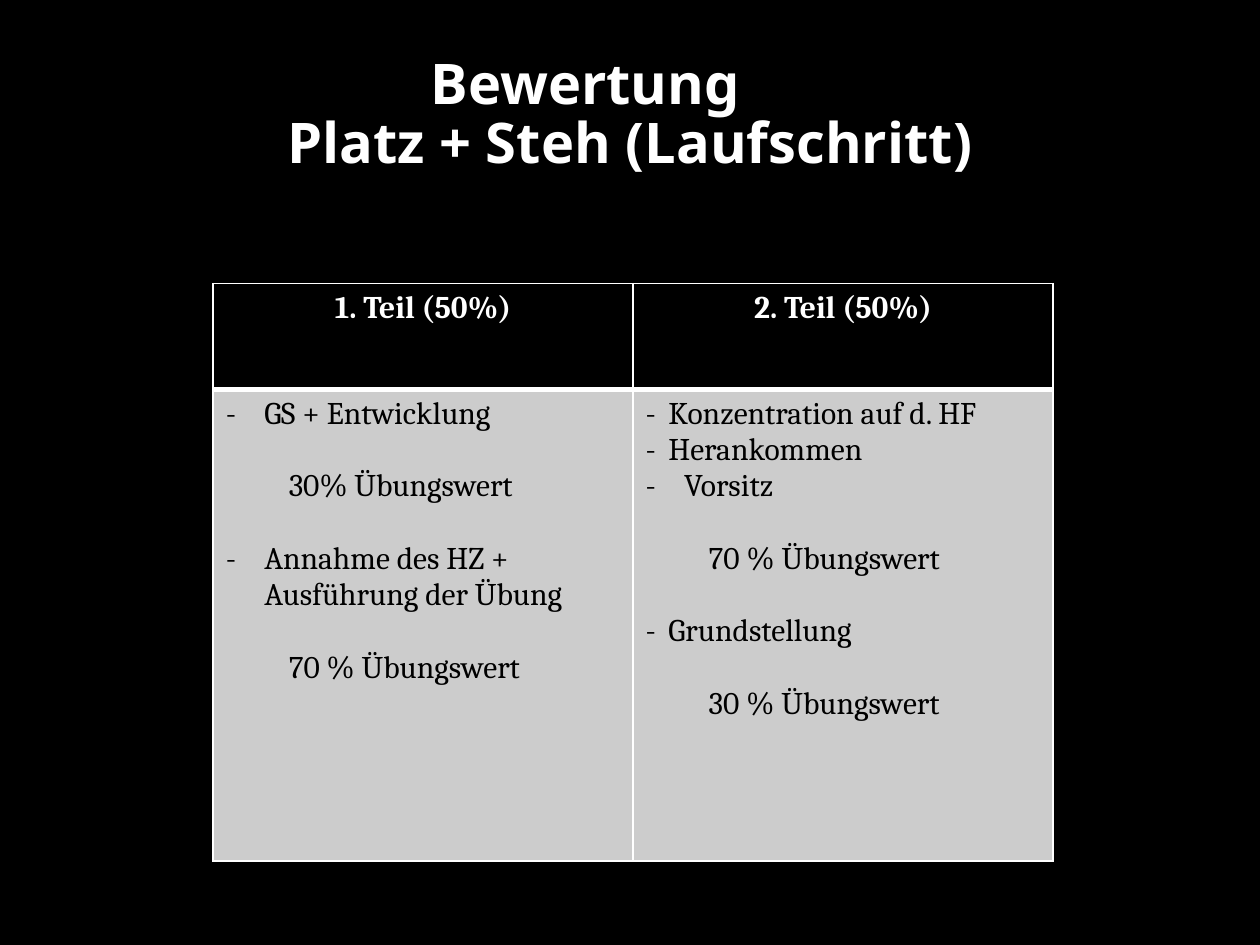
from lxml.etree import SubElement
from pptx import Presentation
from pptx.dml.color import RGBColor
from pptx.enum.text import MSO_ANCHOR, MSO_AUTO_SIZE, PP_ALIGN
from pptx.oxml.ns import qn
from pptx.util import Pt

BLACK = RGBColor(0x00, 0x00, 0x00)
WHITE = RGBColor(0xFF, 0xFF, 0xFF)
GREY = RGBColor(0xCC, 0xCC, 0xCC)

WIDE, NARROW = 22, 13
HEADINGS = ["1. Teil (50%)", "2. Teil (50%)"]
CRITERIA = [
    [
        ("GS + Entwicklung", WIDE, False),
        ("30% Übungswert", None, True),
        ("Annahme des HZ + Ausführung der Übung", WIDE, True),
        ("70 % Übungswert", None, True),
    ],
    [
        ("Konzentration auf d. HF", NARROW, False),
        ("Herankommen", NARROW, False),
        ("Vorsitz", WIDE, False),
        ("70 % Übungswert", None, True),
        ("Grundstellung", NARROW, True),
        ("30 % Übungswert", None, True),
    ],
]


class RatingSlide:
    """Holds the fonts, sizes and current slide, and adds each kind of element."""

    title_font, body_font = "Noto Sans", "Cambria"
    title_size, body_size = 32, 18
    line_gap = 20.7
    share_indent = 36

    def __init__(self, deck):
        self.slide = deck.slides.add_slide(deck.slide_layouts[5])
        backdrop = self.slide.background.fill
        backdrop.solid()
        backdrop.fore_color.rgb = BLACK

    def add_words(self, paragraph, words, font, size, color, bold=False):
        run = paragraph.add_run()
        run.text = words
        run.font.name = font
        run.font.size = Pt(size)
        run.font.bold = bold
        run.font.color.rgb = color

    def title(self, lines, left, top, width, height, shift):
        heading = self.slide.shapes.title
        heading.left, heading.top = Pt(left), Pt(top)
        heading.width, heading.height = Pt(width), Pt(height)
        frame = heading.text_frame
        frame.word_wrap = True
        frame.auto_size = MSO_AUTO_SIZE.NONE
        frame.vertical_anchor = MSO_ANCHOR.MIDDLE
        frame.margin_right = Pt(7.2 + shift)
        for index, line in enumerate(lines):
            paragraph = frame.add_paragraph() if index else frame.paragraphs[0]
            paragraph.alignment = PP_ALIGN.CENTER
            paragraph.line_spacing = 0.88
            paragraph._p.get_or_add_pPr().set("marL", str(Pt(index * shift)))
            self.add_words(paragraph, line, self.title_font, self.title_size, WHITE, True)

    def table(self, left, top, width, row_heights, columns):
        frame = self.slide.shapes.add_table(
            len(row_heights), columns, Pt(left), Pt(top), Pt(width), Pt(sum(row_heights)))
        for row, height in zip(frame.table.rows, row_heights):
            row.height = Pt(height)
        return frame.table

    def cell_style(self, cell, fill, borders):
        properties = cell._tc.get_or_add_tcPr()
        for side, weight in borders.items():
            line = SubElement(properties, qn(f"a:ln{side}"), w=str(Pt(weight)))
            SubElement(SubElement(line, qn("a:solidFill")), qn("a:srgbClr"), val=str(WHITE))
        cell.fill.solid()
        cell.fill.fore_color.rgb = fill

    def heading_cell(self, cell, words):
        self.cell_style(cell, BLACK, {"L": 1, "R": 1, "T": 1, "B": 3})
        paragraph = cell.text_frame.paragraphs[0]
        paragraph.alignment = PP_ALIGN.CENTER
        self.add_words(paragraph, words, self.body_font, self.body_size, WHITE, True)

    def criteria_cell(self, cell, items):
        self.cell_style(cell, GREY, {"L": 1, "R": 1, "T": 3, "B": 1})
        frame = cell.text_frame
        for index, (words, hanging, gap) in enumerate(items):
            paragraph = frame.add_paragraph() if index else frame.paragraphs[0]
            paragraph.space_before = Pt(self.line_gap if gap else 0)
            properties = paragraph._p.get_or_add_pPr()
            if hanging:
                properties.set("marL", str(Pt(hanging)))
                properties.set("indent", str(-Pt(hanging)))
                SubElement(properties, qn("a:buFont"), typeface=self.body_font)
                SubElement(properties, qn("a:buChar"), char="-")
            else:
                paragraph.level = 1
                properties.set("marL", str(Pt(self.share_indent)))
                properties.set("indent", "0")
            self.add_words(paragraph, words, self.body_font, self.body_size, BLACK)


def main():
    deck = Presentation()
    deck.slide_width, deck.slide_height = Pt(720), Pt(540)
    rating = RatingSlide(deck)
    rating.title(["Bewertung", "Platz + Steh (Laufschritt)"], 36, 21.6, 648, 90, shift=51)
    parts = rating.table(121.8, 162, 480, [60.5, 269.5], len(HEADINGS))
    for column, (heading, items) in enumerate(zip(HEADINGS, CRITERIA)):
        rating.heading_cell(parts.cell(0, column), heading)
        rating.criteria_cell(parts.cell(1, column), items)
    deck.save("out.pptx")


if __name__ == "__main__":
    main()
